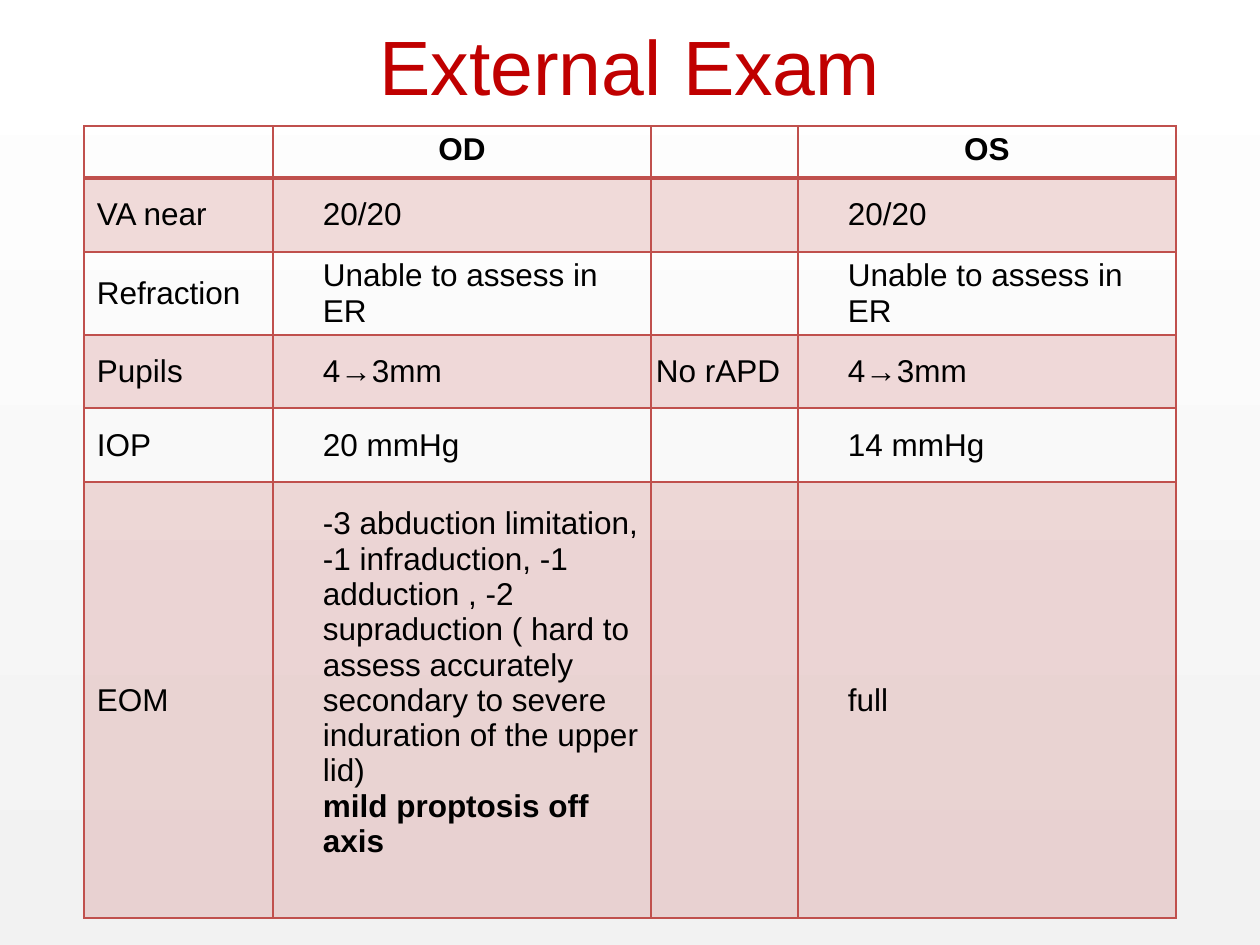
import pptx
import pptx.dml.color
import pptx.enum.text
import pptx.oxml
import pptx.oxml.ns
import pptx.util

PX = 914400 / 126
RED = "C0504D"
ANCHOR = pptx.enum.text.MSO_ANCHOR
ALIGN = pptx.enum.text.PP_ALIGN

COLUMNS = [189, 378, 147, 378]
ROWS = [52, 74, 83, 73, 74, 436]
EOM_OD = ("-3 abduction limitation, -1 infraduction, -1 adduction , -2 "
          "supraduction ( hard to assess accurately secondary to severe "
          "induration of the upper lid)")
FINDINGS = [
    ["", "OD", "", "OS"],
    ["VA near", "20/20", "", "20/20"],
    ["Refraction", "Unable to assess in ER", "", "Unable to assess in ER"],
    ["Pupils", "4→3mm", "No rAPD", "4→3mm"],
    ["IOP", "20 mmHg", "", "14 mmHg"],
    ["EOM", EOM_OD, "", "full"],
]


def px(length):
    return pptx.util.Emu(round(length * PX))


def rgb(color):
    return pptx.dml.color.RGBColor.from_string(color)


def write(para, text, size=18, color="000000", bold=False, align=ALIGN.LEFT):
    para.alignment = align
    span = para.add_run()
    span.text = text
    span.font.name = "Arial"
    span.font.size = pptx.util.Pt(size)
    span.font.bold = bold
    span.font.color.rgb = rgb(color)


def draw_borders(cell, color, **widths):
    """Draw the cell's sides, given in the order L, R, T, B, in points."""
    for side, width in widths.items():
        cell._tc.get_or_add_tcPr().append(pptx.oxml.parse_xml(
            f'<a:ln{side} {pptx.oxml.ns.nsdecls("a")} w="{pptx.util.Pt(width)}">'
            f'<a:solidFill><a:srgbClr val="{color}"/></a:solidFill></a:ln{side}>'))


def fill_cell(cell, color, opacity):
    cell.fill.solid()
    cell.fill.fore_color.rgb = rgb(color)
    tint = cell._tc.tcPr.find(".//" + pptx.oxml.ns.qn("a:solidFill") + "[last()]")
    tint = cell._tc.tcPr.findall(pptx.oxml.ns.qn("a:solidFill"))[-1][0]
    tint.append(pptx.oxml.parse_xml(
        f'<a:alpha {pptx.oxml.ns.nsdecls("a")} val="{opacity * 1000}"/>'))


def format_cell(cell, row, column):
    draw_borders(cell, RED, L=1, R=1, T=2 if row == 1 else 1, B=2 if row == 0 else 1)
    if row % 2:
        fill_cell(cell, RED, 20)
    else:
        cell.fill.background()
    if row:
        cell.vertical_anchor = ANCHOR.MIDDLE
        cell.margin_left = px([13, 50, 5 if FINDINGS[row][column] else 13, 50][column])


def exam_table(page, left, top):
    frame = page.shapes.add_table(len(ROWS), len(COLUMNS), px(left), px(top),
                                  px(sum(COLUMNS)), px(sum(ROWS)))
    table = frame.table
    table.first_row = table.horz_banding = False
    for column, width in zip(table.columns, COLUMNS):
        column.width = px(width)
    for row, height in zip(table.rows, ROWS):
        row.height = px(height)
    for row, texts in enumerate(FINDINGS):
        for column, text in enumerate(texts):
            cell = table.cell(row, column)
            format_cell(cell, row, column)
            para = cell.text_frame.paragraphs[0]
            if text:
                write(para, text, bold=row == 0,
                      align=ALIGN.CENTER if row == 0 else ALIGN.LEFT)
            else:
                para.font.size = pptx.util.Pt(18)
    eye_movement = table.cell(5, 1)
    para = eye_movement.text_frame.paragraphs[0]
    para.add_line_break()
    write(para, "mild proptosis off axis", bold=True)
    eye_movement.margin_bottom = px(41)


def title(page, left, top, width, height):
    box = page.shapes.title
    box.left, box.top, box.width, box.height = map(px, (left, top, width, height))
    box.text_frame.vertical_anchor = ANCHOR.MIDDLE
    write(box.text_frame.paragraphs[0], "External Exam",
          size=44, color="C00000", align=ALIGN.CENTER)


def background(page):
    fill = page.background.fill
    fill.gradient()
    fill.gradient_angle = 90
    for stop, color in zip(fill.gradient_stops, ["F2F2F2", "FFFFFF"]):
        stop.color.rgb = rgb(color)


def main():
    deck = pptx.Presentation()
    deck.slide_width, deck.slide_height = px(1260), px(945)
    page = deck.slides.add_slide(deck.slide_layouts[5])
    background(page)
    exam_table(page, 84, 126)
    title(page, 63, -14, 1134, 158)
    deck.save("out.pptx")


if __name__ == "__main__":
    main()
